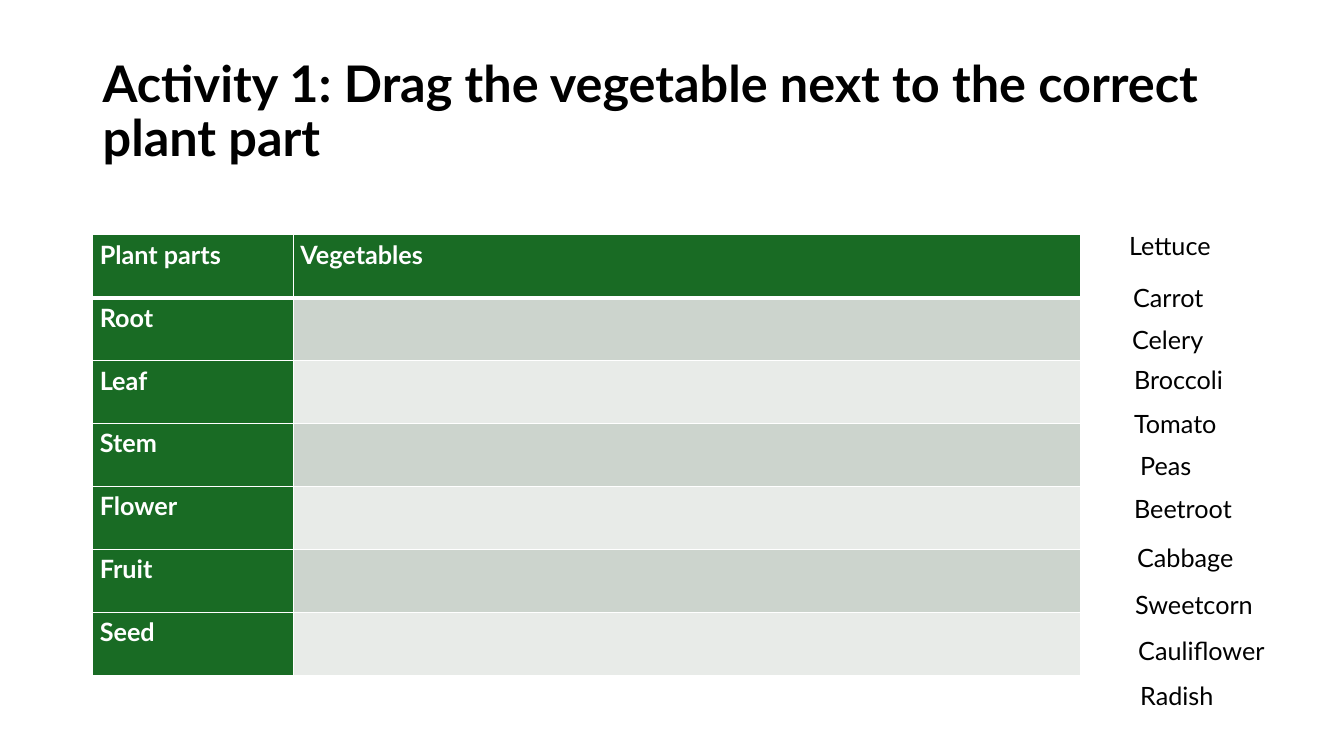
from lxml import etree
from pptx import Presentation
from pptx import util as u
from pptx.dml.color import RGBColor
from pptx.enum import text
from pptx.oxml import ns

COLORS = {"ink": "000000", "white": "FFFFFF", "green": "196B24",
          "band": "CCD4CD", "pale": "E8EBE8"}
PARTS = ["Root", "Leaf", "Stem", "Flower", "Fruit", "Seed"]
VEGETABLES = [
    ("Lettuce", 1110, 224, 103),
    ("Carrot", 1114, 275, 103),
    ("Celery", 1113, 317, 103),
    ("Broccoli", 1115, 357, 125),
    ("Tomato", 1115, 400, 103),
    ("Peas", 1121, 442, 103),
    ("Beetroot", 1115, 484, 139),
    ("Cabbage", 1118, 533, 122),
    ("Sweetcorn", 1116, 580, 139),
    ("Cauliflower", 1119, 625, 162),
    ("Radish", 1121, 670, 109),
]


def px(n):
    return u.Emu(n * 9144)


class Deck:
    font = "Lato"

    def __init__(self, width, height):
        self.prs = Presentation()
        self.prs.slide_width, self.prs.slide_height = px(width), px(height)
        self.s = self.prs.slides.add_slide(self.prs.slide_layouts[6])

    def color(self, name):
        return RGBColor.from_string(COLORS[name])

    def set_text(self, tf, words, size, color, bold=False):
        p = tf.paragraphs[0]
        p.text = words
        p.font.name, p.font.size, p.font.bold = self.font, u.Pt(size), bold
        p.font.color.rgb = self.color(color)
        return p

    def label(self, words, x, y, w, h, size=18, bold=False):
        tf = self.s.shapes.add_textbox(px(x), px(y), px(w), px(h)).text_frame
        tf.word_wrap = True
        return tf, self.set_text(tf, words, size, "ink", bold)

    def title(self, words, x, y, w, h):
        tf, p = self.label(words, x, y, w, h, 36, True)
        tf.vertical_anchor = text.MSO_ANCHOR.MIDDLE
        p.line_spacing = 0.9

    def cell(self, cell, fill, words, top, bottom):
        cell.fill.solid()
        cell.fill.fore_color.rgb = self.color(fill)
        cell.margin_left = cell.margin_right = px(7)
        cell.margin_top = cell.margin_bottom = 0
        p = self.set_text(cell.text_frame, words, 18, "white", True)
        p.line_spacing, p.space_after = 1.15, u.Pt(6)
        tcPr = cell._tc.get_or_add_tcPr()
        for i, (side, width) in enumerate(zip("LRTB", (1, 1, top, bottom))):
            ln = etree.Element(ns.qn(f"a:ln{side}"), w=str(u.Pt(width)))
            fill_el = etree.SubElement(ln, ns.qn("a:solidFill"))
            etree.SubElement(fill_el, ns.qn("a:srgbClr"), val=COLORS["white"])
            tcPr.insert(i, ln)

    def table(self, rows, x, y, widths, h):
        frame = self.s.shapes.add_table(
            len(rows), len(widths), px(x), px(y), px(sum(widths)), px(h))
        table = frame.table
        table.horz_banding = False
        for column, width in zip(table.columns, widths):
            column.width = px(width)
        for r, row in enumerate(rows):
            for c, words in enumerate(row):
                fill = "green" if r == 0 or c == 0 else "band" if r % 2 else "pale"
                self.cell(table.cell(r, c), fill, words,
                          3 if r == 1 else 1, 3 if r == 0 else 1)


def main():
    deck = Deck(1333, 750)
    deck.title("Activity 1: Drag the vegetable next to the correct plant part",
               92, 40, 1150, 145)
    rows = [("Plant parts", "Vegetables")] + [(part, "") for part in PARTS]
    deck.table(rows, 92, 233, (199, 781), 437)
    for name, x, y, w in VEGETABLES:
        deck.label(name, x, y, w, 40)
    deck.prs.save("out.pptx")


if __name__ == "__main__":
    main()
